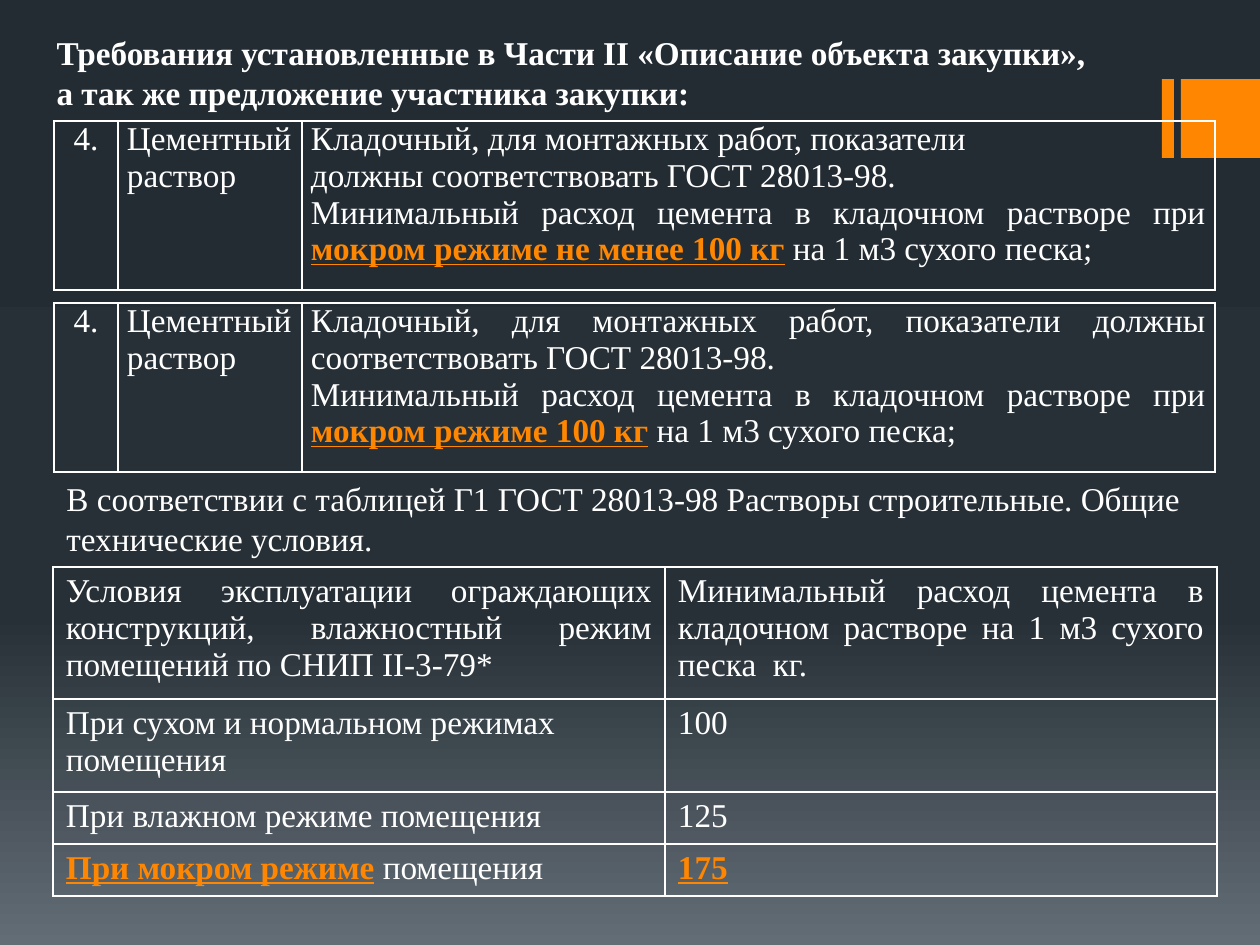
from copy import deepcopy
from dataclasses import dataclass

from lxml import etree
from pptx import Presentation
from pptx import util as u
from pptx.dml.color import RGBColor
from pptx.enum import shapes, text
from pptx.oxml.ns import qn

PX_PER_INCH = 126
LEFT, JUSTIFY, CENTER = text.PP_ALIGN.LEFT, text.PP_ALIGN.JUSTIFY, text.PP_ALIGN.CENTER


@dataclass(frozen=True)
class Theme:
    font: str = "Times New Roman"
    size: int = 19
    text_leading: float = 22.9
    table_leading: float = 21
    border: int = 1
    ink: str = "FFFFFF"
    accent: str = "FF8600"
    background: tuple = ((0, "242C33"), (0.65, "273037"), (1, "636D76"))


THEME = Theme()


@dataclass(frozen=True)
class Run:
    text: str
    bold: bool = False
    key: bool = False


@dataclass(frozen=True)
class Para:
    runs: tuple[Run, ...]
    align: text.PP_ALIGN = LEFT


@dataclass(frozen=True)
class Box:
    x: int
    y: int
    w: int
    h: int

    def emu(self) -> tuple:
        return tuple(px(v) for v in (self.x, self.y, self.w, self.h))


@dataclass(frozen=True)
class Grid:
    x: int
    y: int
    cols: tuple[int, ...]
    rows: tuple[int, ...]
    pad_x: int
    pad_y: int
    cells: tuple


def px(value: int) -> u.Emu:
    return u.Emu(round(value * 914400 / PX_PER_INCH))


def plain(words: str, align=LEFT, bold: bool = False) -> Para:
    return Para((Run(words, bold),), align)


def key(words: str) -> Run:
    return Run(words, bold=True, key=True)


def mortar_grid(y: int, intro: tuple[str, ...], demand: str) -> Grid:
    """One numbered requirement row about cement mortar."""
    usage = Para((Run("Минимальный расход цемента в кладочном растворе при "),
                  key(demand), Run(" на 1 м3 сухого песка;")), JUSTIFY)
    details = [plain(line, JUSTIFY) for line in intro] + [usage]
    row = ([plain("4.", CENTER)], [plain("Цементный раствор", JUSTIFY)], details)
    return Grid(54, y, (64, 184, 913), (169,), 9, 0, (row,))


HEADING = [plain("Требования установленные в Части II «Описание объекта закупки»,", bold=True),
           plain("а так же предложение участника закупки:", bold=True)]
REFERENCE = [plain("В соответствии с таблицей Г1 ГОСТ 28013-98 Растворы строительные. "
                   "Общие технические условия.")]
ACCENT_BARS = (Box(1162, 79, 12, 79), Box(1181, 79, 79, 79))
GRIDS = (
    mortar_grid(121, ("Кладочный, для монтажных работ, показатели ",
                      "должны соответствовать ГОСТ 28013-98."),
                "мокром режиме не менее 100 кг"),
    mortar_grid(303, ("Кладочный, для монтажных работ, показатели должны "
                      "соответствовать ГОСТ 28013-98.",),
                "мокром режиме 100 кг"),
    Grid(53, 567, (612, 552), (132, 93, 52, 52), 13, 6, (
        ([plain("Условия эксплуатации ограждающих конструкций, влажностный режим "
                "помещений по СНИП II-3-79*", JUSTIFY)],
         [plain("Минимальный расход цемента в кладочном растворе на 1 м3 сухого "
                "песка  кг.", JUSTIFY)]),
        ([plain("При сухом и нормальном режимах помещения")], [plain("100")]),
        ([plain("При влажном режиме помещения")], [plain("125")]),
        ([Para((key("При мокром режиме"), Run(" помещения")))], [Para((key("175"),))]),
    )),
)


def write(tf, paras: list[Para], leading: float) -> None:
    for i, para in enumerate(paras):
        p = tf.add_paragraph() if i else tf.paragraphs[0]
        p.alignment = para.align
        p.line_spacing = u.Pt(leading)
        p.space_before = p.space_after = u.Pt(0)
        for run in para.runs:
            r = p.add_run()
            r.text = run.text
            r.font.name, r.font.size = THEME.font, u.Pt(THEME.size)
            r.font.bold, r.font.underline = run.bold, run.key
            r.font.color.rgb = RGBColor.from_string(THEME.accent if run.key else THEME.ink)


def place_text(sp, box: Box, paras: list[Para]) -> None:
    sp.left, sp.top, sp.width, sp.height = box.emu()
    tf = sp.text_frame
    tf.word_wrap = True
    tf.auto_size = text.MSO_AUTO_SIZE.NONE
    tf.vertical_anchor = text.MSO_ANCHOR.TOP
    write(tf, paras, THEME.text_leading)


def draw_bar(s, box: Box) -> None:
    sp = s.shapes.add_shape(shapes.MSO_SHAPE.RECTANGLE, *box.emu())
    sp.shadow.inherit = False
    sp.fill.solid()
    sp.fill.fore_color.rgb = RGBColor.from_string(THEME.accent)
    sp.line.fill.background()


def border_cell(cell) -> None:
    tc_pr = cell._tc.get_or_add_tcPr()
    for i, side in enumerate(("lnL", "lnR", "lnT", "lnB")):
        line = etree.Element(qn(f"a:{side}"), w=str(u.Pt(THEME.border)))
        fill = etree.SubElement(line, qn("a:solidFill"))
        etree.SubElement(fill, qn("a:srgbClr"), val=THEME.ink)
        tc_pr.insert(i, line)


def draw_grid(s, grid: Grid) -> None:
    box = Box(grid.x, grid.y, sum(grid.cols), sum(grid.rows))
    table = s.shapes.add_table(len(grid.rows), len(grid.cols), *box.emu()).table
    table.first_row = table.horz_banding = False
    for column, width in zip(table.columns, grid.cols):
        column.width = px(width)
    for row, height, contents in zip(table.rows, grid.rows, grid.cells):
        row.height = px(height)
        for cell, paras in zip(row.cells, contents):
            cell.margin_left = cell.margin_right = px(grid.pad_x)
            cell.margin_top = cell.margin_bottom = px(grid.pad_y)
            cell.fill.background()
            border_cell(cell)
            write(cell.text_frame, paras, THEME.table_leading)


def paint_background(s) -> None:
    fill = s.background.fill
    fill.gradient()
    fill.gradient_angle = 270
    stops = s._element.xpath(".//a:gsLst")[0]
    stops.append(deepcopy(stops[-1]))
    for stop, (position, color) in zip(fill.gradient_stops, THEME.background):
        stop.position = position
        stop.color.rgb = RGBColor.from_string(color)


def main() -> None:
    prs = Presentation()
    prs.slide_width, prs.slide_height = px(1260), px(945)
    s = prs.slides.add_slide(prs.slide_layouts.get_by_name("Title Only"))
    paint_background(s)
    for bar in ACCENT_BARS:
        draw_bar(s, bar)
    place_text(s.shapes.title, Box(44, 26, 1121, 93), HEADING)
    reference = Box(54, 472, 1168, 93)
    place_text(s.shapes.add_textbox(*reference.emu()), reference, REFERENCE)
    for grid in GRIDS:
        draw_grid(s, grid)
    prs.save("out.pptx")


if __name__ == "__main__":
    main()
